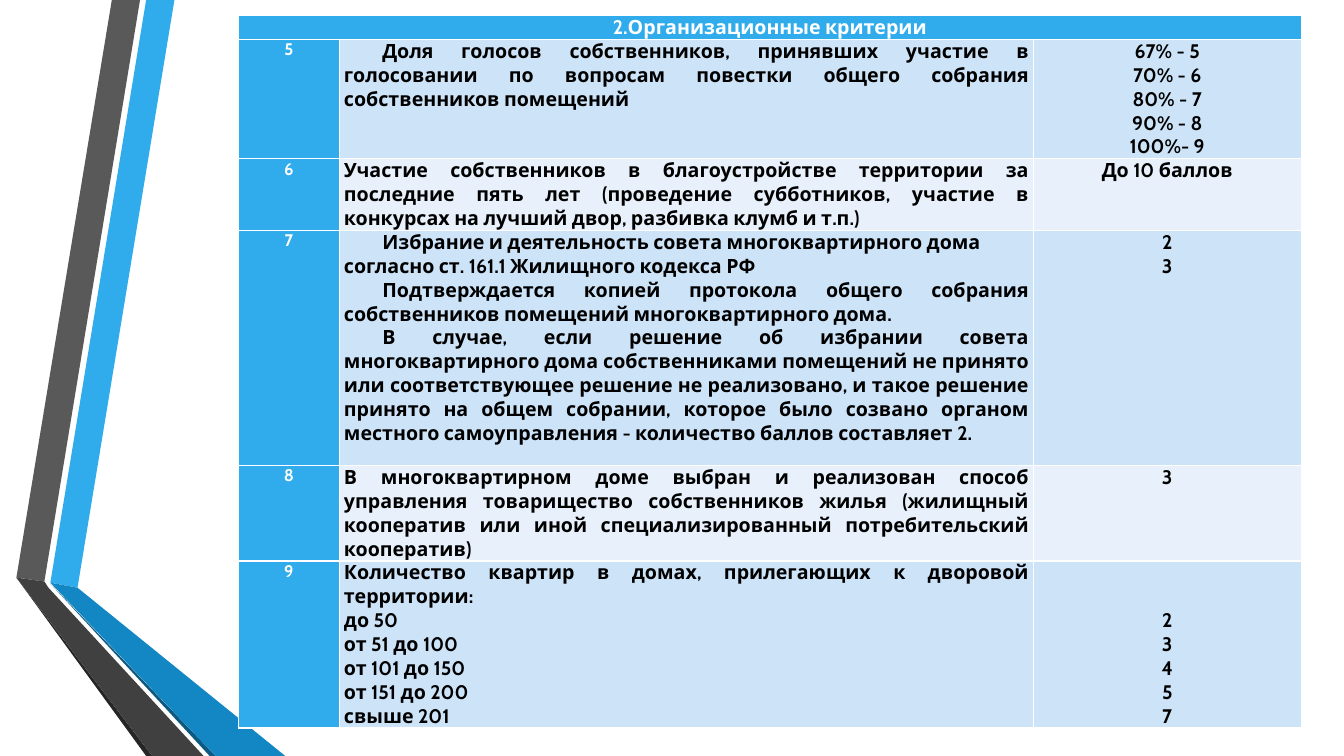
from pptx import Presentation
from pptx.dml.color import RGBColor
from pptx.enum.text import MSO_ANCHOR as Anchor, PP_ALIGN as Align
from pptx.util import Pt

COLORS = {
    "white": "FFFFFF", "black": "000000", "accent": "30ACEC",
    "band_dark": "CDE3F8", "band_light": "E8F1FB",
    "blue": "1287C3", "blue_shade": "0C5A82",
    "grey": "595959", "grey_dark": "404040", "grey_shade": "262626",
}
INDENT = 27.4


def color(name):
    return RGBColor.from_string(COLORS[name])


def fill_cell(cell, fill, lines, size=14, font_color="black", anchor=Anchor.TOP):
    cell.fill.solid()
    cell.fill.fore_color.rgb = color(fill)
    cell.margin_left = cell.margin_right = Pt(3.1)
    cell.margin_top = cell.margin_bottom = Pt(0)
    cell.vertical_anchor = anchor
    frame = cell.text_frame
    for index, (text, align, indent) in enumerate(lines):
        paragraph = frame.add_paragraph() if index else frame.paragraphs[0]
        paragraph.alignment = align
        if indent:
            paragraph._p.get_or_add_pPr().set("indent", str(Pt(indent)))
        run = paragraph.add_run()
        run.text = text
        run.font.name = "Cabin"
        run.font.size = Pt(size)
        run.font.bold = True
        run.font.color.rgb = color(font_color)


deck = Presentation()
deck.slide_width, deck.slide_height = Pt(960), Pt(540)
slide = deck.slides.add_slide(deck.slide_layouts[6])

ribbons = [
    ("accent", [(36, 416.2), (55.4, 419.8), (124.6, 0), (104.4, 0)]),
    ("grey", [(100, 0), (79.9, 0), (11.7, 412.6), (31.7, 415.4)]),
    ("grey_shade", [(11.7, 412.6), (104.4, 540), (108.7, 540)]),
    ("blue_shade", [(36, 416.9), (149.8, 540), (154.1, 540)]),
    ("blue", [(36, 416.2), (154.1, 540), (203.8, 540), (55.4, 419.8)]),
    ("grey_dark", [(11.7, 412.6), (108.7, 540), (145.4, 540), (34.6, 419.8), (31.7, 415.4)]),
]
for ribbon_color, corners in ribbons:
    start, *others = [(Pt(x), Pt(y)) for x, y in corners]
    outline = slide.shapes.build_freeform(*start)
    outline.add_line_segments(others, close=True)
    ribbon = outline.convert_to_shape()
    ribbon.shadow.inherit = False
    ribbon.fill.solid()
    ribbon.fill.fore_color.rgb = color(ribbon_color)
    ribbon.line.fill.background()

criteria = [
    ("5", [("Доля голосов собственников, принявших участие в голосовании по вопросам повестки "
            "общего собрания собственников помещений", Align.JUSTIFY, INDENT)],
     ["67% - 5", "70% - 6", "80% - 7", "90% - 8", "100%- 9"], Anchor.TOP),
    ("6", [("Участие собственников в благоустройстве территории за последние пять лет "
            "(проведение субботников, участие в конкурсах на лучший двор, разбивка клумб и т.п.)",
            Align.JUSTIFY, 0)],
     ["До 10 баллов"], Anchor.TOP),
    ("7", [("Избрание и деятельность совета многоквартирного дома согласно ст. 161.1 "
            "Жилищного кодекса РФ", Align.LEFT, INDENT),
           ("Подтверждается копией протокола общего собрания собственников помещений "
            "многоквартирного дома.", Align.JUSTIFY, INDENT),
           ("В случае, если решение об избрании совета многоквартирного дома собственниками "
            "помещений не принято или соответствующее решение не реализовано, и такое решение "
            "принято на общем собрании, которое было созвано органом местного самоуправления - "
            "количество баллов составляет 2.", Align.JUSTIFY, INDENT)],
     ["2", "3"], Anchor.TOP),
    ("8", [("В многоквартирном доме выбран и реализован способ управления товарищество "
            "собственников жилья (жилищный кооператив или иной специализированный "
            "потребительский кооператив)", Align.JUSTIFY, 0)],
     ["3"], Anchor.TOP),
    ("9", [(line, Align.JUSTIFY, 0) for line in (
        "Количество квартир в домах, прилегающих к дворовой территории:",
        "до 50", "от 51 до 100", "от 101 до 150", "от 151 до 200", "свыше 201")],
     ["2", "3", "4", "5", "7"], Anchor.BOTTOM),
]
column_widths = [72.4, 495.4, 191.6]
row_heights = [17.5, 83.5, 50.7, 167.9, 67.1, 117.5]

table = slide.shapes.add_table(
    len(row_heights), len(column_widths), Pt(170.2), Pt(10.8),
    Pt(sum(column_widths)), Pt(sum(row_heights))).table
for column, width in zip(table.columns, column_widths):
    column.width = Pt(width)
for row, height in zip(table.rows, row_heights):
    row.height = Pt(height)

heading = table.cell(0, 0)
heading.merge(table.cell(0, 2))
fill_cell(heading, "accent", [("2.Организационные критерии", Align.CENTER, 0)], font_color="white")
for row_index, (number, description, scores, score_anchor) in enumerate(criteria, 1):
    band = "band_dark" if row_index % 2 else "band_light"
    fill_cell(table.cell(row_index, 0), "accent", [(number, Align.CENTER, 0)], 12, "white")
    fill_cell(table.cell(row_index, 1), band, description)
    fill_cell(table.cell(row_index, 2), band,
              [(score, Align.CENTER, 0) for score in scores], anchor=score_anchor)

deck.save("out.pptx")
